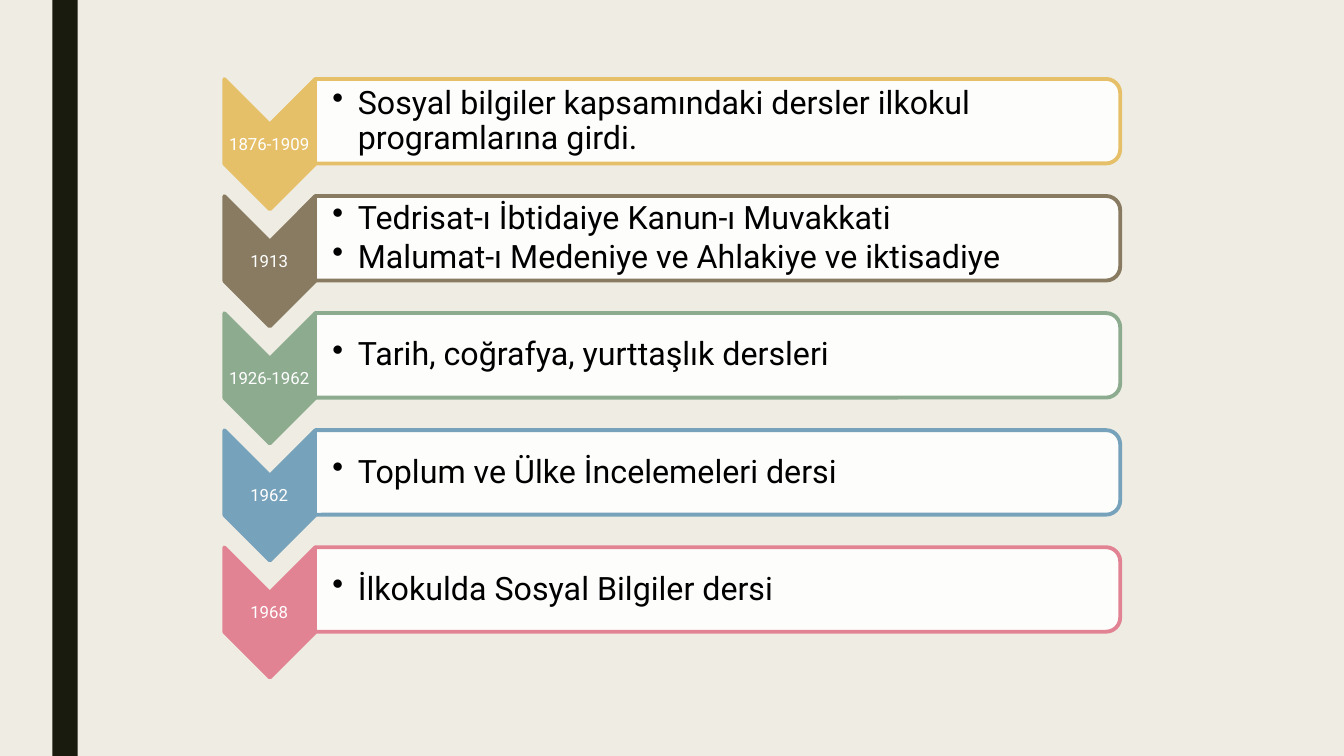
from pptx import Presentation
from pptx.util import Cm, Pt
from pptx.dml.color import RGBColor
from pptx.enum.shapes import MSO_SHAPE as Kind
from pptx.enum.text import MSO_ANCHOR as Anchor, PP_ALIGN as Align
from pptx.oxml.ns import qn
from lxml.etree import SubElement as Sub

PAPER = RGBColor(0xEF, 0xED, 0xE3)
DARK = RGBColor(0x19, 0x1B, 0x0E)
WHITE = RGBColor(0xFF, 0xFF, 0xFF)
BLACK = RGBColor(0, 0, 0)
GOLD = RGBColor(0xE6, 0xC0, 0x69)
BROWN = RGBColor(0x89, 0x7B, 0x61)
GREEN = RGBColor(0x8D, 0xAB, 0x8E)
BLUE = RGBColor(0x77, 0xA2, 0xBB)
PINK = RGBColor(0xE2, 0x83, 0x94)
FONT = "Roboto"
STEP = 2.95  # from one row to the next, in cm

rows = [
    ("1876-1909", GOLD, ["Sosyal bilgiler kapsamındaki dersler ilkokul programlarına girdi."]),
    ("1913", BROWN, ["Tedrisat-ı İbtidaiye Kanun-ı Muvakkati",
                     "Malumat-ı Medeniye ve Ahlakiye ve iktisadiye"]),
    ("1926-1962", GREEN, ["Tarih, coğrafya, yurttaşlık dersleri"]),
    ("1962", BLUE, ["Toplum ve Ülke İncelemeleri dersi"]),
    ("1968", PINK, ["İlkokulda Sosyal Bilgiler dersi"]),
]

prs = Presentation()
prs.slide_width, prs.slide_height = Cm(33.87), Cm(19.05)
slide = prs.slides.add_slide(prs.slide_layouts[6])
slide.background.fill.solid()
slide.background.fill.fore_color.rgb = PAPER


def draw(kind, x, y, w, h, fill, line=None):
    """Add a filled shape; outlined ones are turned by 90 degrees."""
    shape = slide.shapes.add_shape(kind, Cm(x), Cm(y), Cm(w), Cm(h))
    shape.shadow.inherit = False
    shape.fill.solid()
    shape.fill.fore_color.rgb = fill
    if line is None:
        shape.line.fill.background()
    else:
        shape.line.color.rgb = line
        shape.line.width = Pt(2.75)
        shape.rotation = 90
    return shape


def write(x, y, w, h, lines, size, color, left, pad):
    """Add a middle-anchored text box and return its paragraphs."""
    frame = slide.shapes.add_textbox(Cm(x), Cm(y), Cm(w), Cm(h)).text_frame
    frame.word_wrap = True
    frame.vertical_anchor = Anchor.MIDDLE
    frame.margin_left = Cm(left)
    frame.margin_right = frame.margin_top = frame.margin_bottom = Cm(pad)
    frame.text = "\n".join(lines)
    for para in frame.paragraphs:
        para.line_spacing = 0.9
        para.space_after = Pt(3)
        if left > pad:  # bulleted list
            props = para._p.get_or_add_pPr()
            props.set("marL", str(Cm(0.64)))
            props.set("indent", str(-Cm(0.64)))
            Sub(props, qn("a:buChar")).set("char", "•")
        para.font.size = Pt(size)
        para.font.name = FONT
        para.font.color.rgb = color
    return frame.paragraphs


# Side bar
draw(Kind.RECTANGLE, 1.32, 0, 0.64, 19.05, DARK)

# Timeline rows
for i, (years, color, items) in enumerate(rows):
    top = i * STEP
    draw(Kind.CHEVRON, 5.16, 2.49 + top, 3.28, 2.29, color, color)
    label = write(5.64, 3.15 + top, 2.29, 0.99, [years], 12, WHITE, 0.03, 0.03)
    label[0].alignment = Align.CENTER

    card = draw(Kind.ROUND_2_SAME_RECTANGLE, 17.02, -7.09 + top, 2.13, 20.29, WHITE, color)
    tint = card.fill._xPr.find(qn("a:solidFill"))[0]
    Sub(tint, qn("a:alpha")).set("val", "90000")
    write(7.92, 2.11 + top, 20.19, 1.9, items, 23, BLACK, 0.46, 0.04)

prs.save("out.pptx")
